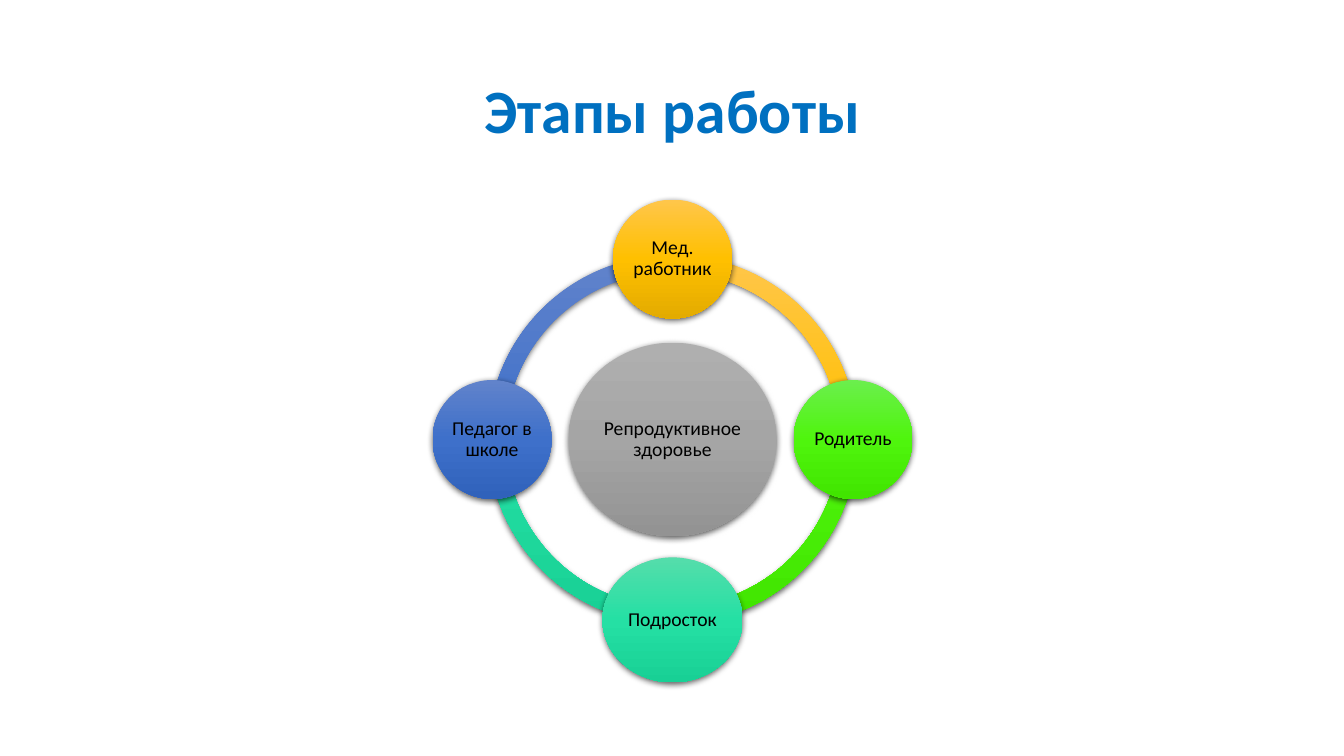
from copy import deepcopy
from math import cos, radians, sin

from lxml import etree
from pptx import Presentation
from pptx.dml.color import RGBColor
from pptx.enum import shapes, text
from pptx.oxml.ns import qn
from pptx.util import Inches, Pt

TITLE = "Этапы работы"
CENTER = (6.67, 4.36)
ORBIT = 1.79
RING_SIZE = 3.66
RING_WIDTH = 0.046
QUARTER = 54
HUB = ("Репродуктивное здоровье", (2.06, 1.92), ("AFAFAF", "A5A5A5", "939393"))
STAGES = [
    ("Мед. работник", (1.18, 1.18), ("FFC64B", "FFC000", "E3AB00")),
    ("Родитель", (1.18, 1.18), ("6BEF4D", "4FF50D", "41E500")),
    ("Подросток", (1.39, 1.24), ("55DDAB", "25E0A4", "18D095")),
    ("Педагог в школе", (1.18, 1.18), ("6183CB", "3E70CA", "3062BB")),
]


def color(value):
    return RGBColor.from_string(value)


def style_text(frame, size, value, bold=False):
    frame.word_wrap = True
    frame.auto_size = text.MSO_AUTO_SIZE.NONE
    frame.vertical_anchor = text.MSO_ANCHOR.MIDDLE
    para = frame.paragraphs[0]
    para.alignment = text.PP_ALIGN.CENTER
    para.line_spacing = 0.9
    for span in para.runs:
        span.font.name = "Calibri"
        span.font.size = Pt(size)
        span.font.bold = bold
        span.font.color.rgb = color(value)


def add_part(page, kind, center, size, shades):
    x, y = center
    width, height = size
    part = page.shapes.add_shape(
        kind, Inches(x - width / 2), Inches(y - height / 2), Inches(width), Inches(height)
    )
    part.fill.gradient()
    part.fill.gradient_angle = 270
    properties = part._element.spPr
    stop_list = properties.find(".//" + qn("a:gsLst"))
    stop_list.append(deepcopy(stop_list[-1]))
    for stop, position, shade in zip(part.fill.gradient_stops, (0, 0.5, 1), shades):
        stop.position = position
        stop.color.rgb = color(shade)
    part.line.fill.background()
    part.shadow.inherit = False
    shadow = etree.SubElement(
        properties.find(qn("a:effectLst")), qn("a:outerShdw"),
        blurRad=str(Pt(4.5)), dist=str(Pt(1.5)), dir="5400000", algn="ctr", rotWithShape="0",
    )
    tint = etree.SubElement(shadow, qn("a:srgbClr"), val="000000")
    etree.SubElement(tint, qn("a:alpha"), val="63000")
    return part


def add_circle(page, center, label, size, shades):
    circle = add_part(page, shapes.MSO_SHAPE.OVAL, center, size, shades)
    frame = circle.text_frame
    frame.text = label
    frame.margin_left = frame.margin_right = Inches(0.02)
    frame.margin_top = frame.margin_bottom = Inches(0.02)
    style_text(frame, 14, "000000")


def main():
    deck = Presentation()
    deck.slide_width, deck.slide_height = Inches(13.33), Inches(7.5)
    page = deck.slides.add_slide(deck.slide_layouts[5])

    title = page.shapes.title
    title.left, title.top = Inches(0.92), Inches(0.4)
    title.width, title.height = Inches(11.5), Inches(1.45)
    title.text_frame.text = TITLE
    style_text(title.text_frame, 44, "0070C0", bold=True)

    for index, (label, size, shades) in reversed(list(enumerate(STAGES))):
        arc = add_part(page, shapes.MSO_SHAPE.BLOCK_ARC, CENTER, (RING_SIZE, RING_SIZE), shades)
        arc.adjustments[0] = (index + 3) % 4 * QUARTER
        arc.adjustments[1] = index * QUARTER
        arc.adjustments[2] = RING_WIDTH

    add_circle(page, CENTER, *HUB)
    for index, stage in enumerate(STAGES):
        angle = radians(index * 90 - 90)
        center = (CENTER[0] + ORBIT * cos(angle), CENTER[1] + ORBIT * sin(angle))
        add_circle(page, center, *stage)

    deck.save("out.pptx")


if __name__ == "__main__":
    main()
